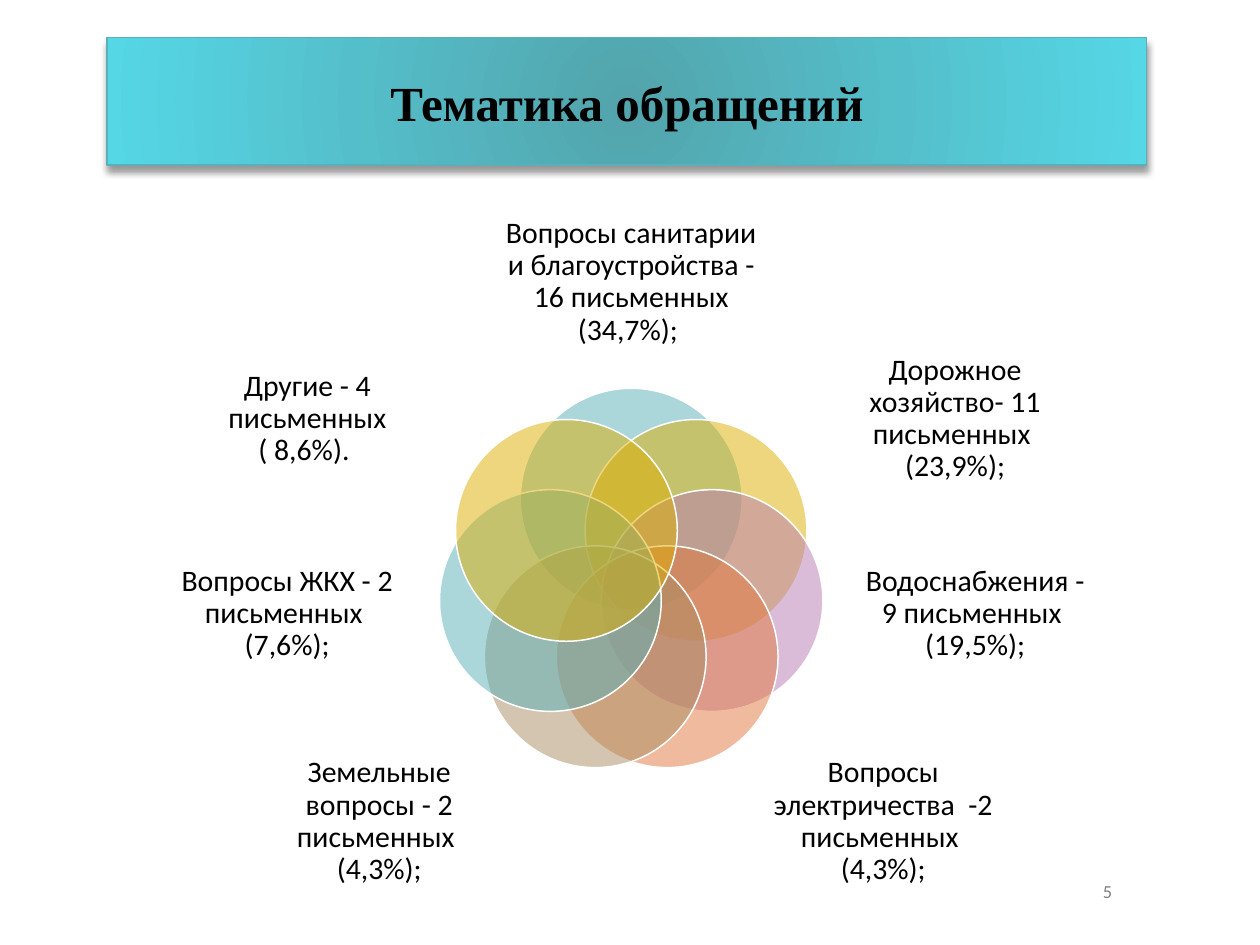
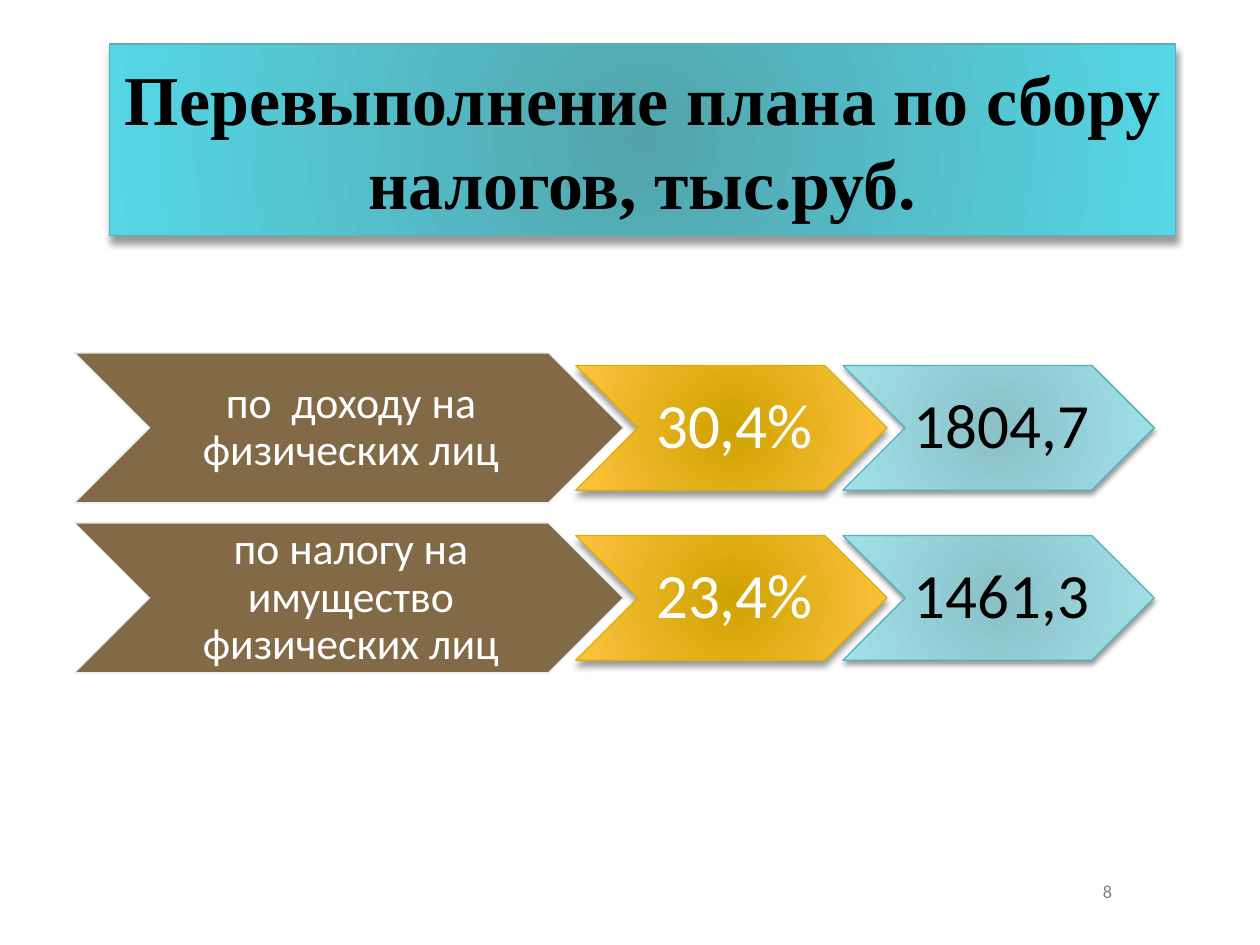
import math
from lxml import etree
from pptx import Presentation
from pptx.dml.color import RGBColor
from pptx.enum.shapes import MSO_SHAPE
from pptx.enum.text import MSO_ANCHOR, PP_ALIGN
from pptx.oxml.ns import qn
from pptx.util import Inches, Pt

RECTANGLE, ELLIPSE, CHEVRON = MSO_SHAPE.RECTANGLE, MSO_SHAPE.OVAL, MSO_SHAPE.CHEVRON
MIDDLE, CENTER = MSO_ANCHOR.MIDDLE, PP_ALIGN.CENTER

BLACK = RGBColor(0x00, 0x00, 0x00)
WHITE = RGBColor(0xFF, 0xFF, 0xFF)
GRAY = RGBColor(0x80, 0x80, 0x80)
TEAL = RGBColor(0x59, 0xB0, 0xB9)
GOLD = RGBColor(0xDE, 0xAE, 0x00)
LILAC = RGBColor(0xB7, 0x7B, 0xB4)
ORANGE = RGBColor(0xE0, 0x77, 0x3C)
SAND = RGBColor(0xA9, 0x8D, 0x63)
BROWN = RGBColor(0x82, 0x6A, 0x47)
PALE = RGBColor(0xE7, 0xEC, 0xED)
# Radial gradients, from the middle to the edge
BAND_GLOW = (RGBColor(0x53, 0xA4, 0xAC), RGBColor(0x55, 0xD7, 0xE6))
GOLD_GLOW = (RGBColor(0xCF, 0xA2, 0x00), RGBColor(0xFF, 0xC3, 0x40))
TEAL_GLOW = (RGBColor(0x8A, 0xC0, 0xC7), RGBColor(0xA1, 0xE1, 0xEA))

# Shadows as blur and distance in points
DEEP_SHADOW, SOFT_SHADOW = (4, 3.4), (3, 2)

# The grid: 100 columns by 75 rows
COLUMNS, ROWS = 100, 75
BODY_FONT, TITLE_FONT = "Calibri", "Times New Roman"


class Deck:
    """Holds the presentation, its grid and the current slide."""

    def __init__(self):
        self.presentation = Presentation()
        self.presentation.slide_width = Inches(10)
        self.presentation.slide_height = Inches(7.5)
        self.column = self.presentation.slide_width / COLUMNS
        self.row = self.presentation.slide_height / ROWS
        self.slide = None

    def new_slide(self):
        self.slide = self.presentation.slides.add_slide(self.presentation.slide_layouts[6])

    def place(self, center_x, center_y, width, height):
        """Turn a centred grid box into left, top, width and height."""
        return (round((center_x - width / 2) * self.column),
                round((center_y - height / 2) * self.row),
                round(width * self.column), round(height * self.row))

    def set_text(self, shape, text, size, color, margins=(0, 0, 0, 0), name=BODY_FONT,
                 bold=False, line_spacing=0.9):
        frame = shape.text_frame
        paragraph = frame.paragraphs[0]
        paragraph.text = text
        sides = ("margin_left", "margin_top", "margin_right", "margin_bottom")
        formats = (
            (frame, {"word_wrap": True, "vertical_anchor": MIDDLE,
                     **{side: Inches(margin) for side, margin in zip(sides, margins)}}),
            (paragraph, {"alignment": CENTER, "line_spacing": line_spacing}),
            (paragraph.font, {"size": Pt(size), "name": name, "bold": bold}),
        )
        for target, values in formats:
            for attribute, value in values.items():
                setattr(target, attribute, value)
        paragraph.font.color.rgb = color

    def shape(self, kind, box, fill, line, line_width=0.75, alpha=None, shadow=None):
        shape = self.slide.shapes.add_shape(kind, *self.place(*box))
        if isinstance(fill, tuple) and not isinstance(fill, RGBColor):
            self.glow(shape, fill)
        else:
            shape.fill.solid()
            shape.fill.fore_color.rgb = fill
        shape.line.color.rgb = line
        shape.line.width = Pt(line_width)
        shape.shadow.inherit = False
        if alpha:
            color = shape._element.spPr.find(f"{qn('a:solidFill')}/{qn('a:srgbClr')}")
            etree.SubElement(color, qn("a:alpha"), val=str(alpha * 1000))
        if shadow:
            self.drop_shadow(shape, *shadow)
        return shape

    def glow(self, shape, colors):
        shape.fill.gradient()
        for stop, position, color in zip(shape.fill.gradient_stops, (0, 1), colors):
            stop.position = position
            stop.color.rgb = color
        gradient = shape._element.spPr.find(qn("a:gradFill"))
        gradient.remove(gradient.find(qn("a:lin")))
        circle = etree.SubElement(gradient, qn("a:path"), {"path": "circle"})
        etree.SubElement(circle, qn("a:fillToRect"), {side: "100000" for side in "ltrb"})

    def drop_shadow(self, shape, blur, distance):
        effects = shape._element.spPr.find(qn("a:effectLst"))
        shadow = etree.SubElement(effects, qn("a:outerShdw"), blurRad=str(Pt(blur)),
                                  dist=str(Pt(distance)), dir="5400000", rotWithShape="0")
        color = etree.SubElement(shadow, qn("a:srgbClr"), val=str(BLACK))
        etree.SubElement(color, qn("a:alpha"), val="40000")

    def label(self, box, text, size, color):
        self.set_text(self.slide.shapes.add_textbox(*self.place(*box)), text, size, color)

    def title(self, box, text, size):
        band = self.shape(RECTANGLE, box, BAND_GLOW, TEAL, shadow=DEEP_SHADOW)
        self.set_text(band, text, size, BLACK, (0.1, 0.05, 0.1, 0.05), TITLE_FONT, True, 1.0)

    def page_number(self, number):
        self.label((87.9, 70.85, 5.8, 1.7), str(number), 10.5, GRAY)

    def chevron(self, box, text, size, color, margins, **style):
        self.set_text(self.shape(CHEVRON, box, **style), text, size, color, margins)


def build_topics(deck):
    deck.new_slide()
    # Seven overlapping petals on a ring, each with a label beside it
    middle_x, middle_y, ring, diameter = 50.1, 46.2, 6.58, 17.6
    label_top = (0, 22.4, 20.2, 10.8)
    label_upper = (25.7, 33.25, 19.1, 11.9)
    label_side = (27.3, 48.75, 18.7, 12.7)
    label_lower = (20, 65.2, 20.2, 11.6)
    topics = (
        ("Вопросы санитарии и благоустройства - 16 письменных (34,7%); ", TEAL, label_top, 1),
        ("Дорожное хозяйство- 11 письменных  (23,9%);", GOLD, label_upper, 1),
        ("Водоснабжения - 9 письменных  (19,5%);", LILAC, label_side, 1),
        ("Вопросы электричества  -2 письменных  (4,3%);", ORANGE, label_lower, 1),
        ("Земельные вопросы - 2 письменных  (4,3%);", SAND, label_lower, -1),
        ("Вопросы ЖКХ - 2 письменных  (7,6%);", TEAL, label_side, -1),
        ("Другие - 4 письменных ( 8,6%). ", GOLD, label_upper, -1),
    )
    for index, (text, color, (offset, label_y, width, height), side) in enumerate(topics):
        angle = math.tau * index / len(topics)
        petal = (middle_x + ring * math.sin(angle), middle_y - ring * math.cos(angle),
                 diameter, diameter)
        deck.shape(ELLIPSE, petal, color, WHITE, 0.85, alpha=50)
        deck.label((middle_x + side * offset, label_y, width, height), text, 17, BLACK)
    deck.title((49.75, 8.05, 82.5, 10.1), "Тематика обращений", 28)
    deck.page_number(5)


def build_taxes(deck):
    deck.new_slide()
    # One row of chevrons per tax: name, share, amount
    first_row, row_step = 33.95, 13.5
    big, small = (43.6, 11.9), (24.7, 9.9)
    name_margins, figure_margins = (0.03, 0.02, 0, 0.02), (0.05, 0.03, 0, 0.03)
    name_style = {"fill": BROWN, "line": PALE, "line_width": 0.85}
    share_style = {"fill": GOLD_GLOW, "line": GOLD, "shadow": DEEP_SHADOW}
    amount_style = {"fill": TEAL_GLOW, "line": TEAL, "shadow": SOFT_SHADOW}
    columns = (
        (27.7, big, 25, WHITE, name_margins, name_style),
        (58.05, small, 36, WHITE, figure_margins, share_style),
        (79.25, small, 36, BLACK, figure_margins, amount_style),
    )
    taxes = (
        ("по  доходу на физических лиц", "30,4%", "1804,7"),
        ("по налогу на имущество физических лиц", "23,4%", "1461,3"),
    )
    for index, tax in enumerate(taxes):
        center_y = first_row + index * row_step
        for text, (center_x, extent, size, color, margins, style) in zip(tax, columns):
            deck.chevron((center_x, center_y, *extent), text, size, color, margins, **style)
    deck.title((51, 11.1, 84.6, 15.2), "Перевыполнение плана по сбору налогов, тыс.руб.", 40)
    deck.page_number(8)


def main():
    deck = Deck()
    build_topics(deck)
    build_taxes(deck)
    deck.presentation.save("out.pptx")


if __name__ == "__main__":
    main()
